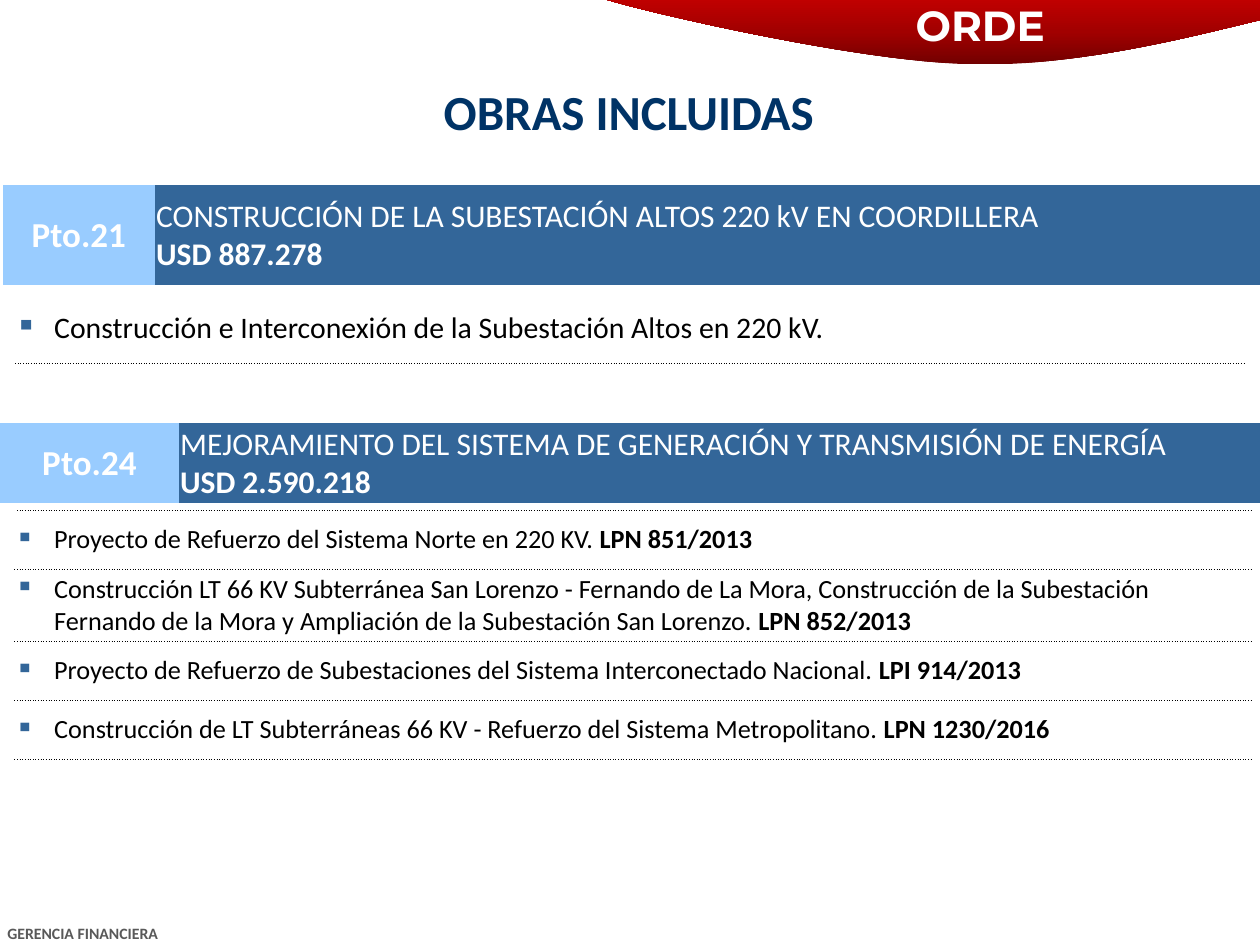
from copy import deepcopy

from lxml import etree
from pptx import Presentation
from pptx.dml.color import RGBColor
from pptx.enum.text import MSO_ANCHOR as ANCHOR, PP_ALIGN as ALIGN
from pptx.oxml import parse_xml
from pptx.oxml.ns import nsdecls, qn
from pptx.util import Inches, Pt

NO_STYLE = "{2D5ABB26-0587-4C30-8999-92F81FD0307C}"
DOTTED = ("000000", 0.25, "sysDot")
WHITE_LINE = ("FFFFFF", 1, "solid")


def rgb(value):
    return RGBColor.from_string(value)


def curve(p0, p1, p2, p3, steps=24):
    """Points along a cubic Bezier curve, without its start."""
    for i in range(1, steps + 1):
        t = i / steps
        weights = ((1 - t) ** 3, 3 * t * (1 - t) ** 2, 3 * t * t * (1 - t), t ** 3)
        yield tuple(sum(w * p[axis] for w, p in zip(weights, (p0, p1, p2, p3)))
                    for axis in (0, 1))


class Deck:
    font = "Calibri"
    light, dark, navy = "99CCFF", "336699", "003366"

    def __init__(self):
        self.prs = Presentation()
        self.prs.slide_width, self.prs.slide_height = Inches(10), Inches(7.5)
        self.s = self.prs.slides.add_slide(self.prs.slide_layouts[6])

    def style(self, p, size, color, bold=None, font=None, align=None):
        if align is not None:
            p.alignment = align
        f = p.font
        f.name, f.size, f.bold = font or self.font, Pt(size), bold
        f.color.rgb = rgb(color)

    def text(self, box, content, size, color, align=ALIGN.LEFT, font=None):
        tf = self.s.shapes.add_textbox(*map(Inches, box)).text_frame
        tf.word_wrap = True
        p = tf.paragraphs[0]
        p.add_run().text = content
        self.style(p, size, color, True, font, align)

    def banner(self, start, curves, end, stops):
        """Curved header shape with a vertical gradient, stops from the bottom up."""
        points, last = [], start
        for c1, c2, to in curves:
            points += curve(last, c1, c2, to)
            last = to
        builder = self.s.shapes.build_freeform(*map(Inches, start), scale=1.0)
        builder.add_line_segments([tuple(map(Inches, pt)) for pt in points + [end]])
        sp = builder.convert_to_shape()
        sp.shadow.inherit = False
        sp.line.fill.background()
        sp.fill.gradient()
        sp.fill.gradient_angle = 90
        gs_list = sp._element.spPr.find(".//" + qn("a:gsLst"))
        gs_list.insert(1, deepcopy(gs_list[0]))
        for i, (stop, color) in enumerate(zip(sp.fill.gradient_stops, stops)):
            stop.position = i / (len(stops) - 1)
            stop.color.rgb = rgb(color)

    def table(self, left, top, widths, heights):
        t = self.s.shapes.add_table(
            len(heights), len(widths), Inches(left), Inches(top),
            Inches(sum(widths)), Inches(sum(heights))).table
        t.first_row = t.horz_banding = False
        t._tbl.tblPr.find(qn("a:tableStyleId")).text = NO_STYLE
        for col, w in zip(t.columns, widths):
            col.width = Inches(w)
        for row, h in zip(t.rows, heights):
            row.height = Inches(h)
        return t

    def cell(self, cell, inset, fill=None, borders=None):
        """Prepare a cell and return its text frame."""
        cell.vertical_anchor = ANCHOR.MIDDLE
        cell.margin_left = cell.margin_top = cell.margin_right = Inches(inset)
        cell.margin_bottom = 0
        tc_pr = cell._tc.get_or_add_tcPr()
        for side, (color, width, dash) in (borders or {}).items():
            tc_pr.append(parse_xml(
                f'<a:ln{side} {nsdecls("a")} w="{Pt(width)}"><a:solidFill>'
                f'<a:srgbClr val="{color}"/></a:solidFill>'
                f'<a:prstDash val="{dash}"/></a:ln{side}>'))
        if fill:
            cell.fill.solid()
            cell.fill.fore_color.rgb = rgb(fill)
        else:
            cell.fill.background()
        return cell.text_frame

    def heading(self, left, top, widths, height, point, work, amount):
        t = self.table(left, top, widths, [height])
        p = self.cell(t.cell(0, 0), 0.01, self.light).paragraphs[0]
        p.add_run().text = point
        self.style(p, 20, "FFFFFF", True, align=ALIGN.CENTER)
        tf = self.cell(t.cell(0, 1), 0.01, self.dark)
        for p, content, bold in ((tf.paragraphs[0], work, False),
                                 (tf.add_paragraph(), amount, True)):
            p.add_run().text = content
            self.style(p, 18, "FFFFFF", bold)

    def bullets(self, left, top, width, heights, items, size, borders, fill=None):
        """One table row per item; an item is its text and a bold tender number."""
        t = self.table(left, top, [width], heights)
        for i, (work, tender) in enumerate(items):
            p = self.cell(t.cell(i, 0), 0, fill, borders).paragraphs[0]
            p_pr = p._p.get_or_add_pPr()
            p_pr.set("marL", str(Inches(0.31)))
            p_pr.set("indent", str(-Inches(0.31)))
            color = etree.SubElement(p_pr, qn("a:buClr"))
            etree.SubElement(color, qn("a:srgbClr"), val=self.dark)
            etree.SubElement(p_pr, qn("a:buChar"), char="▪")
            p.add_run().text = work
            if tender:
                r = p.add_run()
                r.text = tender
                r.font.bold = True
            self.style(p, size, "000000")


def main():
    deck = Deck()
    deck.banner((4.79, -0.01),
                [((5.09, 0.09), (6.82, 0.49), (7.69, 0.51)),
                 ((8.56, 0.54), (9.61, 0.25), (10, 0.16))],
                (10, 0), ["720000", "A20000", "C00000"])
    deck.text((7.13, -0.05, 1.3, 0.5), "ORDE", 24, "FFFFFF", ALIGN.CENTER, "Montserrat")
    deck.text((-0.04, 7.28, 3.46, 0.25), "GERENCIA FINANCIERA", 9, "595959")
    deck.text((0, 0.6, 9.98, 0.55), "OBRAS INCLUIDAS", 28, deck.navy, ALIGN.CENTER)

    deck.heading(0.02, 1.47, [1.21, 8.77], 0.79, "Pto.21",
                 "CONSTRUCCIÓN DE LA SUBESTACIÓN ALTOS 220 kV EN COORDILLERA",
                 "USD 887.278")
    deck.bullets(0.12, 2.33, 9.76, [0.55],
                 [("Construcción e Interconexión de la Subestación Altos en 220 kV.", "")],
                 17, {"B": DOTTED}, "FFFFFF")

    deck.heading(0, 3.36, [1.42, 8.58], 0.63, "Pto.24",
                 "MEJORAMIENTO DEL SISTEMA DE GENERACIÓN Y TRANSMISIÓN DE ENERGÍA",
                 "USD 2.590.218")
    works = [
        ("Proyecto de Refuerzo del Sistema Norte en 220 KV. ", "LPN 851/2013"),
        ("Construcción LT 66 KV Subterránea San Lorenzo - Fernando de La Mora, "
         "Construcción de la Subestación Fernando de la Mora y Ampliación de la "
         "Subestación San Lorenzo. ", "LPN 852/2013"),
        ("Proyecto de Refuerzo de Subestaciones del Sistema Interconectado Nacional. ",
         "LPI 914/2013"),
        ("Construcción de LT Subterráneas 66 KV - Refuerzo del Sistema Metropolitano. ",
         "LPN 1230/2016"),
    ]
    deck.bullets(0.12, 4.05, 9.82, [0.47, 0.57, 0.47, 0.47], works, 15,
                 {"L": WHITE_LINE, "R": WHITE_LINE, "T": DOTTED, "B": DOTTED})
    deck.prs.save("out.pptx")


if __name__ == "__main__":
    main()
